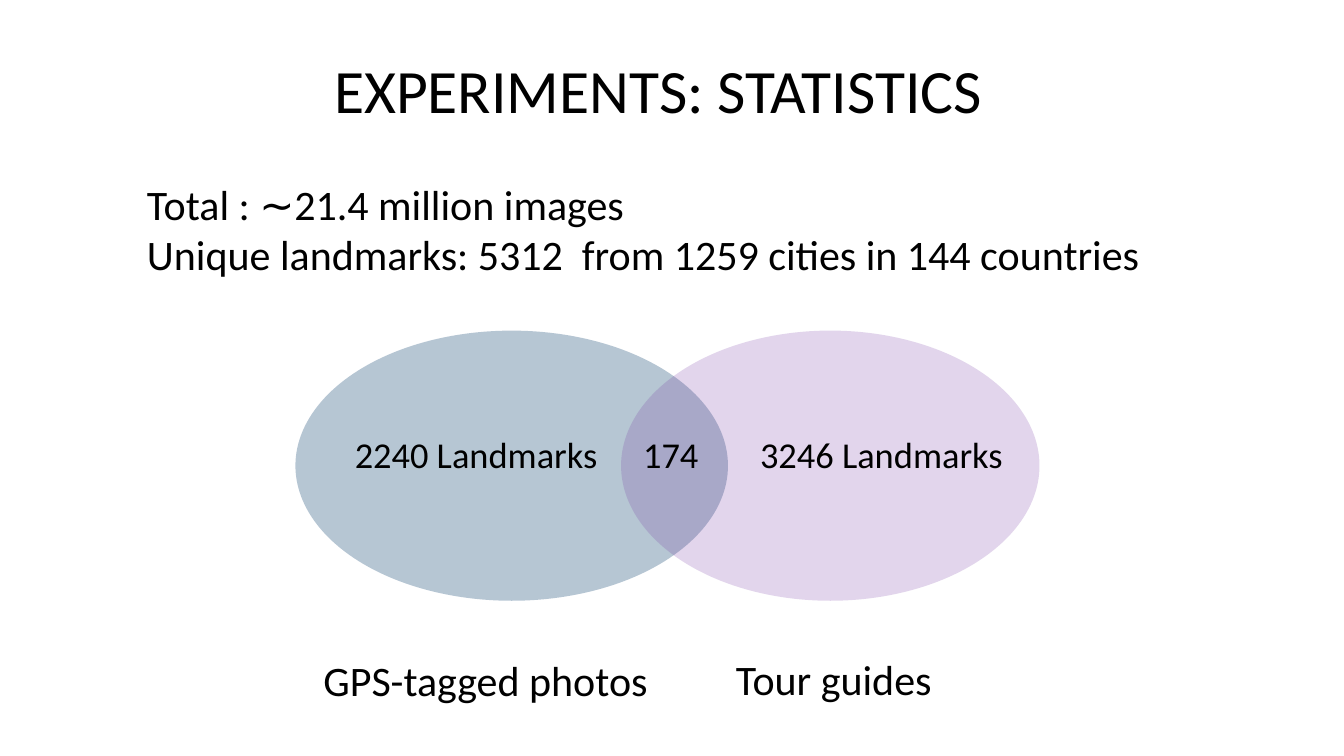
"""Build the landmark statistics slide with its two-set diagram."""
from dataclasses import dataclass

from lxml.etree import SubElement
from pptx import Presentation
from pptx.dml.color import RGBColor as RGB
from pptx.enum.shapes import MSO_SHAPE as Shape
from pptx.enum.text import MSO_ANCHOR as Anchor, PP_ALIGN as Align
from pptx.oxml.ns import qn
from pptx.util import Inches, Pt


@dataclass(frozen=True)
class Theme:
    """Hold the colours, font and type sizes."""
    font: str = "Calibri"
    ink: str = "000000"
    photo: str = "1F4E79"
    guide: str = "7030A0"
    title: int = 44
    body: int = 30
    label: int = 26


class Deck:
    """Draw styled elements on the current slide."""

    def __init__(self, theme):
        """Start a wide deck with one blank slide."""
        self.theme = theme
        self.file = Presentation()
        self.file.slide_width = Inches(13.33)
        self.file.slide_height = Inches(7.5)
        self.slide = self.file.slides.add_slide(self.file.slide_layouts[6])

    def text(self, box, lines, size, wrap=True, frame=None, para=None):
        """Add a text box with one paragraph per line."""
        area = self.slide.shapes.add_textbox(*map(Inches, box)).text_frame
        for name, value in {"word_wrap": wrap, **(frame or {})}.items():
            setattr(area, name, value)
        area.text = "\n".join(lines)
        look = {"name": self.theme.font, "size": Pt(size)}
        for part in area.paragraphs:
            for name, value in (para or {}).items():
                setattr(part, name, value)
            for name, value in look.items():
                setattr(part.font, name, value)
            part.font.color.rgb = RGB.from_string(self.theme.ink)

    def oval(self, box, color, alpha):
        """Add a see-through ellipse with alpha in percent."""
        shape = self.slide.shapes.add_shape(Shape.OVAL, *map(Inches, box))
        shape.shadow.inherit = False
        shape.line.fill.background()
        shape.fill.solid()
        shape.fill.fore_color.rgb = RGB.from_string(color)
        tint = shape.fill._xPr.find(qn("a:solidFill"))[0]
        SubElement(tint, qn("a:alpha"), val=str(alpha * 1000))

    def save(self):
        """Write the deck."""
        self.file.save("out.pptx")


def main():
    """Compose the slide."""
    theme = Theme()
    deck = Deck(theme)
    deck.text((0.78, 0.2, 11.5, 1.45), ["EXPERIMENTS: STATISTICS"], theme.title,
              frame={"vertical_anchor": Anchor.MIDDLE},
              para={"alignment": Align.CENTER, "line_spacing": 0.9})
    for left, width, color, alpha in (
        (2.93, 4.29, theme.photo, 32),
        (6.16, 4.15, theme.guide, 20),
    ):
        deck.oval((left, 3.28, width, 2.68), color, alpha)
    for left, width, label in (
        (3.42, 2.99, "2240 Landmarks"),
        (7.44, 2.66, "3246 Landmarks"),
        (6.28, 0.75, "174"),
    ):
        deck.text((left, 4.24, width, 0.54), [label], theme.label,
                  wrap=label != "174")
    for left, top, width, name in (
        (3.11, 6.44, 3.93, "GPS-tagged photos"),
        (7.2, 6.43, 3.14, "Tour guides"),
    ):
        deck.text((left, top, width, 0.61), [name], theme.body)
    deck.text((1.36, 1.72, 10.1, 1.11), [
        "Total : ∼21.4 million images",
        "Unique landmarks: 5312  from 1259 cities in 144 countries",
    ], theme.body, wrap=False)
    deck.save()


if __name__ == "__main__":
    main()
